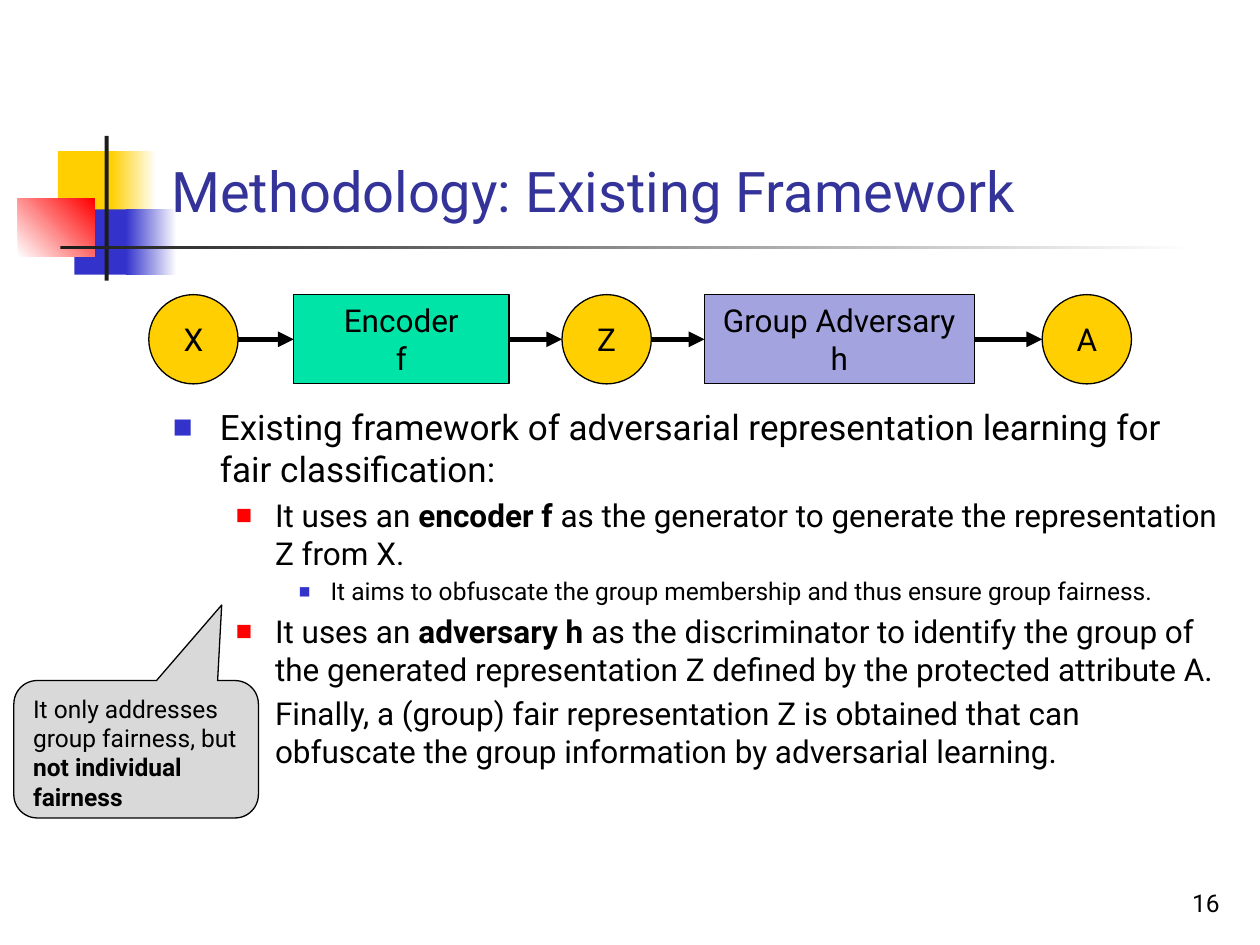
from dataclasses import dataclass
from itertools import pairwise

from lxml.etree import SubElement
from pptx import Presentation
from pptx.dml.color import RGBColor
from pptx.enum.shapes import MSO_CONNECTOR, MSO_SHAPE
from pptx.enum.text import MSO_ANCHOR, MSO_AUTO_SIZE, PP_ALIGN
from pptx.oxml.ns import qn
from pptx.util import Cm, Pt


@dataclass(frozen=True)
class Theme:
    font: str = "Roboto"
    ink: str = "000000"
    heading: str = "333399"
    gold: str = "FFCF01"
    blue: str = "3333CC"
    red: str = "FF0000"
    bar: str = "1C1C1C"
    white: str = "FFFFFF"
    green: str = "00E4A8"
    lilac: str = "A3A3E0"
    grey: str = "D9D9D9"
    title_size: int = 32
    lead_size: int = 20
    text_size: int = 18
    small_size: int = 14
    outline: float = 0.75
    arrow: int = 3


theme = Theme()


def style(paragraph, size, color=theme.ink, align=PP_ALIGN.LEFT):
    paragraph.alignment = align
    paragraph.font.name = theme.font
    paragraph.font.size = Pt(size)
    paragraph.font.color.rgb = RGBColor.from_string(color)


def add_block(kind, box, color, outlined=True):
    block = slide.shapes.add_shape(kind, *map(Cm, box))
    block.shadow.inherit = False
    block.fill.solid()
    block.fill.fore_color.rgb = RGBColor.from_string(color)
    if outlined:
        block.line.color.rgb = RGBColor.from_string(theme.ink)
        block.line.width = Pt(theme.outline)
    else:
        block.line.fill.background()
    return block


deck = Presentation()
deck.slide_width, deck.slide_height = Cm(25.4), Cm(19.05)
slide = deck.slides.add_slide(deck.slide_layouts[1])
title, body = slide.placeholders

ornaments = [
    ((1.17, 3.05, 1.22, 1.32), theme.gold, None, 0),
    ((2.24, 3.05, 0.91, 1.32), theme.gold, theme.white, 0),
    ((1.5, 4.22, 1.17, 1.32), theme.blue, None, 0),
    ((2.54, 4.22, 1.02, 1.32), theme.blue, theme.white, 0),
    ((0.36, 4.01, 1.55, 1.17), theme.white, theme.red, 45),
    ((2.11, 2.74, 0.08, 2.92), theme.bar, None, 0),
    ((1.22, 4.95, 22.86, 0.08), theme.bar, theme.white, 0),
]
for box, start, end, angle in ornaments:
    ornament = add_block(MSO_SHAPE.RECTANGLE, box, start, outlined=False)
    if end:
        ornament.fill.gradient()
        ornament.fill.gradient_angle = angle
        for stop, color in zip(ornament.fill.gradient_stops, (start, end)):
            stop.color.rgb = RGBColor.from_string(color)
    title.element.addprevious(ornament.element)

title.left, title.top, title.width, title.height = map(Cm, (3.2, 0.58, 21.64, 4.06))
title.text = "Methodology: Existing Framework"
title.text_frame.auto_size = MSO_AUTO_SIZE.NONE
title.text_frame.vertical_anchor = MSO_ANCHOR.BOTTOM
style(title.text_frame.paragraphs[0], theme.title_size, theme.heading)

body.left, body.top, body.width, body.height = map(Cm, (3.23, 8.05, 21.64, 9.3))
body.text_frame.auto_size = MSO_AUTO_SIZE.NONE
levels = [
    (theme.lead_size, theme.blue, 60, 0.95, 0.95),
    (theme.text_size, theme.red, 55, 2.06, 0.79),
    (theme.small_size, theme.blue, 50, 3.18, 0.64),
]
points = [
    (0, ["Existing framework of adversarial representation learning for fair classification:"]),
    (1, ["It uses an ", "encoder f", " as the generator to generate the representation Z from X."]),
    (2, ["It aims to obfuscate the group membership and thus ensure group fairness."]),
    (1, ["It uses an ", "adversary h ", "as the discriminator to identify the group of the "
         "generated representation Z defined by the protected attribute A."]),
    (1, ["Finally, a (group) fair representation Z is obtained that can obfuscate the group "
         "information by adversarial learning."]),
]
for number, (level, pieces) in enumerate(points):
    point = body.text_frame.add_paragraph() if number else body.text_frame.paragraphs[0]
    point.level = level
    size, bullet_color, bullet_percent, margin, hanging = levels[level]
    properties = point._p.get_or_add_pPr()
    properties.set("marL", str(Cm(margin)))
    properties.set("indent", str(-Cm(hanging)))
    SubElement(SubElement(properties, qn("a:buClr")), qn("a:srgbClr"), val=bullet_color)
    SubElement(properties, qn("a:buSzPct"), val=str(bullet_percent * 1000))
    SubElement(properties, qn("a:buFont"), typeface=theme.font)
    SubElement(properties, qn("a:buChar"), char="■")
    style(point, size)
    for position, piece in enumerate(pieces):
        run = point.add_run()
        run.text = piece
        if position == 1:
            run.font.bold = True

page = slide.shapes.add_textbox(*map(Cm, (19.56, 17.35, 5.28, 1.27))).text_frame
page.word_wrap = True
page.vertical_anchor = MSO_ANCHOR.BOTTOM
page.text = "16"
style(page.paragraphs[0], theme.small_size, align=PP_ALIGN.RIGHT)

flow_top, flow_height = 5.94, 1.8
flow = [
    ("X", MSO_SHAPE.OVAL, 3, flow_height, theme.gold),
    ("Encoder\nf", MSO_SHAPE.RECTANGLE, 5.92, 4.34, theme.green),
    ("Z", MSO_SHAPE.OVAL, 11.33, flow_height, theme.gold),
    ("Group Adversary\nh", MSO_SHAPE.RECTANGLE, 14.2, 5.44, theme.lilac),
    ("A", MSO_SHAPE.OVAL, 21.01, flow_height, theme.gold),
]
stages = []
for label, kind, left, width, color in flow:
    stage = add_block(kind, (left, flow_top, width, flow_height), color)
    caption = stage.text_frame.paragraphs[0]
    caption.text = label
    style(caption, theme.text_size, align=PP_ALIGN.CENTER)
    stages.append(stage)
stages[3].text_frame.vertical_anchor = MSO_ANCHOR.TOP

middle = Cm(flow_top + flow_height / 2)
for source, target in pairwise(stages):
    arrow = slide.shapes.add_connector(
        MSO_CONNECTOR.STRAIGHT, source.left + source.width, middle, target.left, middle)
    if source.auto_shape_type == MSO_SHAPE.RECTANGLE:
        arrow.begin_connect(source, 3)
    else:
        arrow.end_connect(target, 1)
    arrow.line.color.rgb = RGBColor.from_string(theme.ink)
    arrow.line.width = Pt(theme.arrow)
    SubElement(arrow.get_or_add_ln(), qn("a:tailEnd"), type="triangle")
    SubElement(arrow.element.spPr, qn("a:effectLst"))

callout = add_block(MSO_SHAPE.ROUNDED_RECTANGULAR_CALLOUT, (0.28, 13.72, 4.93, 2.77), theme.grey)
for index, value in enumerate((0.35, -1.05, 0.17)):
    callout.adjustments[index] = value
callout.text_frame.vertical_anchor = MSO_ANCHOR.TOP
remark = callout.text_frame.paragraphs[0]
style(remark, theme.small_size)
remark.add_run().text = "It only addresses group fairness, but "
emphasis = remark.add_run()
emphasis.text = "not individual fairness"
emphasis.font.bold = True

deck.save("out.pptx")
